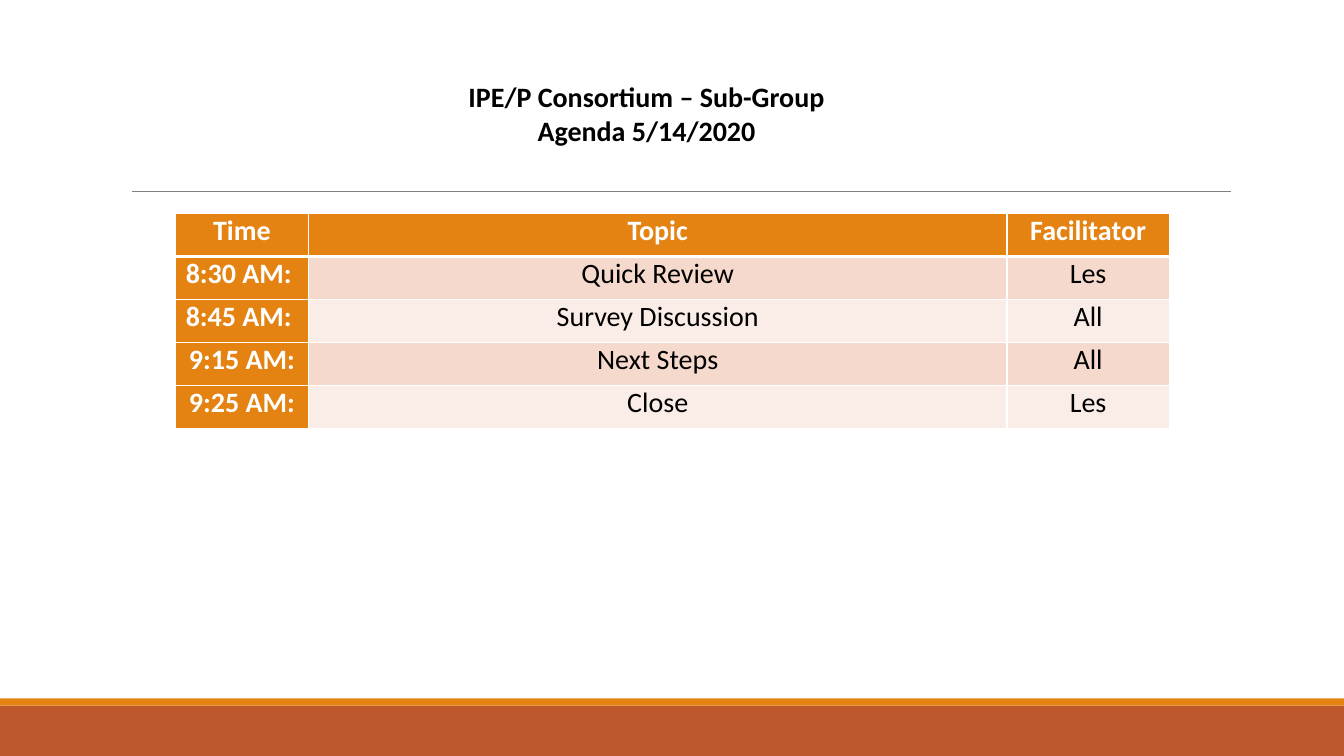
"""Build the agenda slide of the consortium sub-group."""
from lxml import etree
from pptx import Presentation
from pptx.dml.color import RGBColor
from pptx.enum.shapes import MSO_CONNECTOR as Link, MSO_SHAPE as Shape
from pptx.enum.text import MSO_ANCHOR as Anchor, PP_ALIGN as Align
from pptx.oxml.ns import qn
from pptx.util import Inches, Pt

TITLE = ["IPE/P Consortium – Sub-Group", "Agenda 5/14/2020"]
AGENDA = [
    ("Time", "Topic", "Facilitator"),
    ("8:30 AM: ", "Quick Review", "Les"),
    ("8:45 AM: ", "Survey Discussion", "All"),
    ("9:15 AM:", "Next Steps", "All"),
    ("9:25 AM:", "Close", "Les"),
]
WIDTHS = [1.32, 6.93, 1.61]
ROW = 0.426
FONT = "Calibri"
WHITE = RGBColor(0xFF, 0xFF, 0xFF)
BLACK = RGBColor(0, 0, 0)
GRAY = RGBColor(0x80, 0x80, 0x80)
ORANGE = RGBColor(0xE4, 0x83, 0x12)
RUST = RGBColor(0xBD, 0x58, 0x2C)
BANDS = [RGBColor(0xFA, 0xED, 0xE7), RGBColor(0xF5, 0xD9, 0xCC)]


def style(para, color, bold):
    para.alignment = Align.CENTER
    font = para.font
    font.name, font.size, font.bold = FONT, Pt(20), bold
    font.color.rgb = color


def add_bar(slide, top, height, color):
    bar = slide.shapes.add_shape(
        Shape.RECTANGLE, 0, Inches(top), Inches(13.333), Inches(height))
    bar.shadow.inherit = False
    bar.fill.solid()
    bar.fill.fore_color.rgb = color
    bar.line.fill.background()


def add_rule(slide):
    rule = slide.shapes.add_connector(
        Link.STRAIGHT, Inches(1.31), Inches(1.9), Inches(12.21), Inches(1.9))
    rule.line.color.rgb = GRAY
    rule.line.width = Pt(0.5)
    etree.SubElement(rule._element.spPr, qn("a:effectLst"))


def set_edges(cell, row):
    props = cell._tc.get_or_add_tcPr()
    thick = {"T": row == 1, "B": row == 0}
    for spot, side in enumerate("LRTB"):
        edge = etree.Element(qn(f"a:ln{side}"))
        edge.set("w", str(Pt(3 if thick.get(side) else 1)))
        fill = etree.SubElement(edge, qn("a:solidFill"))
        etree.SubElement(fill, qn("a:srgbClr")).set("val", str(WHITE))
        props.insert(spot, edge)


def add_agenda(slide):
    table = slide.shapes.add_table(
        len(AGENDA), len(WIDTHS), Inches(1.74), Inches(2.12),
        Inches(sum(WIDTHS)), Inches(ROW * len(AGENDA))).table
    table.first_col = True
    for col, width in zip(table.columns, WIDTHS):
        col.width = Inches(width)
    for r, items in enumerate(AGENDA):
        for c, text in enumerate(items):
            cell = table.cell(r, c)
            head = r == 0 or c == 0
            cell.text = text
            cell.margin_left = cell.margin_right = Inches(0.07)
            cell.margin_top = cell.margin_bottom = 0
            cell.fill.solid()
            cell.fill.fore_color.rgb = ORANGE if head else BANDS[r % 2]
            style(cell.text_frame.paragraphs[0], WHITE if head else BLACK, head)
            set_edges(cell, r)


def set_title(slide):
    title = slide.shapes.title
    title.left, title.top = Inches(4.53), Inches(0.74)
    title.width, title.height = Inches(3.77), Inches(0.77)
    frame = title.text_frame
    frame.text = "\n".join(TITLE)
    frame.word_wrap = False
    frame.vertical_anchor = Anchor.MIDDLE
    for para in frame.paragraphs:
        style(para, BLACK, True)
        para.space_before = Pt(0)


def main():
    deck = Presentation()
    deck.slide_width, deck.slide_height = Inches(13.333), Inches(7.5)
    slide = deck.slides.add_slide(deck.slide_layouts[5])
    add_bar(slide, 7, 0.5, RUST)
    add_bar(slide, 6.93, 0.07, ORANGE)
    add_rule(slide)
    add_agenda(slide)
    set_title(slide)
    deck.save("out.pptx")


if __name__ == "__main__":
    main()
